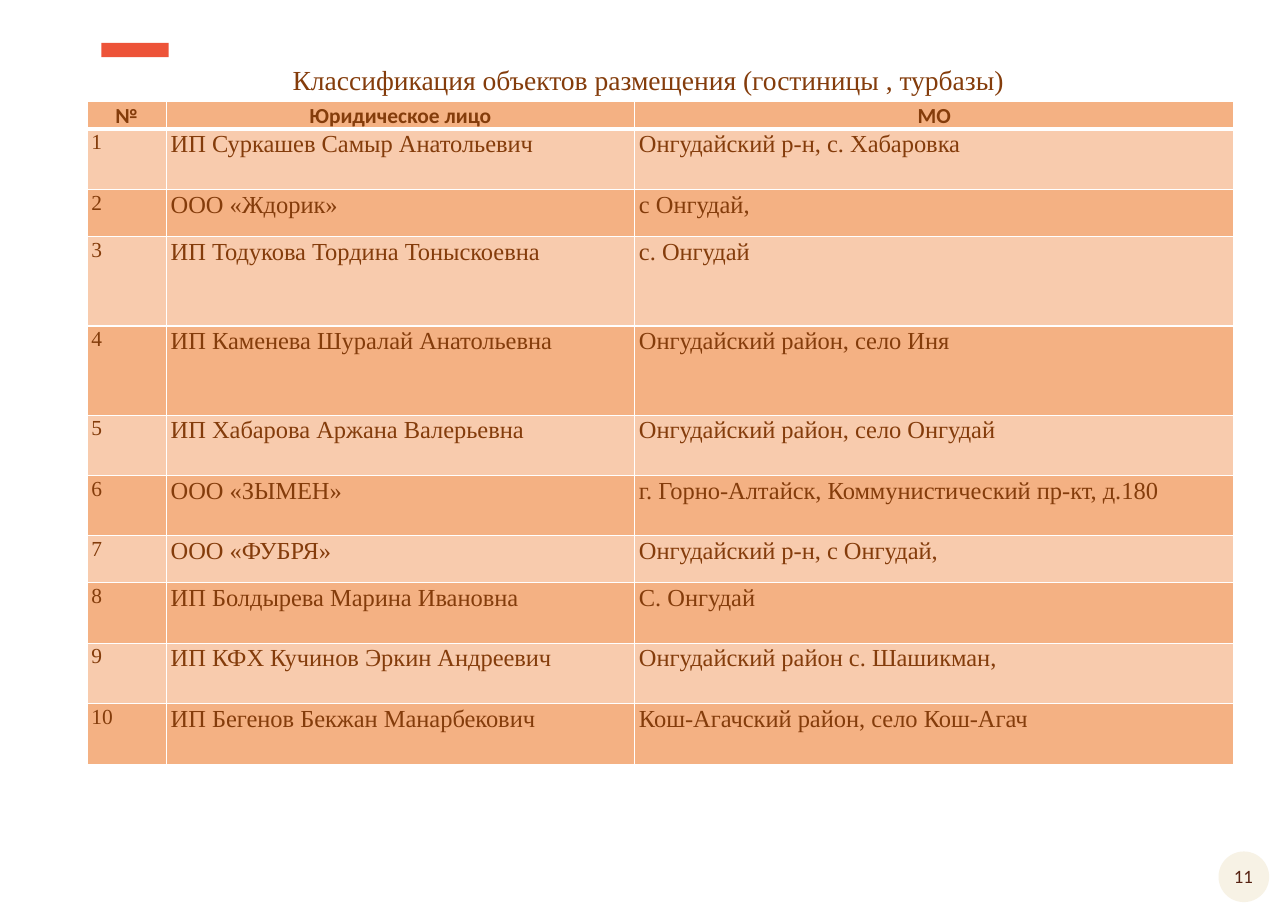
from lxml import etree
from pptx import Presentation
from pptx.dml.color import RGBColor
from pptx.enum.shapes import MSO_SHAPE
from pptx.enum.text import MSO_ANCHOR, PP_ALIGN
from pptx.oxml.ns import qn
from pptx.util import Inches, Pt

LEFT, CENTER = PP_ALIGN.LEFT, PP_ALIGN.CENTER
MIDDLE = MSO_ANCHOR.MIDDLE
OVAL, RECT = MSO_SHAPE.OVAL, MSO_SHAPE.RECTANGLE
SERIF, SANS = "Times New Roman", "Calibri"
BROWN, DARK, LIGHT, WHITE = "843C0B", "F4B183", "F8CBAD", "FFFFFF"


def rgb(color):
    return RGBColor.from_string(color)


def write(tf, text, size, font=SERIF, color=BROWN, bold=False, align=LEFT,
          line=1.0, after=0):
    p = tf.paragraphs[0]
    p.alignment, p.line_spacing, p.space_after = align, line, Pt(after)
    r = p.add_run()
    r.text = text
    r.font.size, r.font.name, r.font.bold = Pt(size), font, bold
    r.font.color.rgb = rgb(color)


prs = Presentation()
prs.slide_width, prs.slide_height = Inches(11.69), Inches(8.27)
s = prs.slides.add_slide(prs.slide_layouts[5])

# Accent bar and page-number badge
for kind, box, color in [(OVAL, (11.06, 7.73, 0.46, 0.46), "F7F2E5"),
                         (RECT, (0.92, 0.39, 0.61, 0.13), "ED5338")]:
    sp = s.shapes.add_shape(kind, *map(Inches, box))
    sp.shadow.inherit = False
    sp.fill.solid()
    sp.fill.fore_color.rgb = rgb(color)
    sp.line.fill.background()

page = s.shapes.add_textbox(Inches(11.03), Inches(7.8), Inches(0.51), Inches(0.31))
page.text_frame.word_wrap = True
write(page.text_frame, "11", 12.3, font=SANS, color="562212", align=CENTER)

# Title
title = s.shapes.title
title.left, title.top = Inches(1.53), Inches(0.52)
title.width, title.height = Inches(8.71), Inches(0.4)
title.text_frame.vertical_anchor = MIDDLE
write(title.text_frame, "Классификация объектов размещения (гостиницы , турбазы)",
      18, align=CENTER)

# Table content: legal entity, municipality, row height
header = ("№", "Юридическое лицо", "МО")
entries = [
    ("ИП Суркашев Самыр Анатольевич", "Онгудайский р-н, с. Хабаровка", 0.55),
    ("ООО «Ждорик»", "с Онгудай,", 0.43),
    ("ИП Тодукова Тордина Тоныскоевна", "с. Онгудай", 0.81),
    ("ИП Каменева Шуралай Анатольевна", "Онгудайский район, село Иня", 0.81),
    ("ИП Хабарова Аржана Валерьевна", "Онгудайский район, село Онгудай", 0.55),
    ("ООО «ЗЫМЕН»", "г. Горно-Алтайск, Коммунистический пр-кт, д.180", 0.54),
    ("ООО «ФУБРЯ»", "Онгудайский р-н, с Онгудай,", 0.43),
    ("ИП Болдырева Марина Ивановна", "С. Онгудай", 0.55),
    ("ИП КФХ Кучинов Эркин Андреевич", "Онгудайский район с. Шашикман,", 0.55),
    ("ИП Бегенов Бекжан Манарбекович", "Кош-Агачский район, село Кош-Агач", 0.55),
]
rows = [header] + [(str(n), name, place)
                   for n, (name, place, _) in enumerate(entries, 1)]
heights = [0.24] + [height for *_, height in entries]
widths = [0.72, 4.25, 5.44]

# Table
table = s.shapes.add_table(len(rows), len(widths), Inches(0.79), Inches(0.92),
                           Inches(sum(widths)), Inches(sum(heights))).table
for col, width in zip(table.columns, widths):
    col.width = Inches(width)
for row, height in zip(table.rows, heights):
    row.height = Inches(height)

for i, texts in enumerate(rows):
    for j, text in enumerate(texts):
        cell = table.cell(i, j)
        cell.margin_left = cell.margin_right = Inches(0.04)
        cell.margin_top = cell.margin_bottom = 0
        # White grid, thicker under the header
        for side in "LRTB":
            thick = (i, side) in ((0, "B"), (1, "T"))
            ln = etree.SubElement(cell._tc.get_or_add_tcPr(), qn(f"a:ln{side}"),
                                  w=str(Pt(3 if thick else 1)))
            fill = etree.SubElement(ln, qn("a:solidFill"))
            etree.SubElement(fill, qn("a:srgbClr"), val=WHITE)
        cell.fill.solid()
        cell.fill.fore_color.rgb = rgb(LIGHT if i % 2 else DARK)
        head = i == 0
        write(cell.text_frame, text, 14 if head or j == 0 else 16,
              font=SANS if head else SERIF, bold=head,
              align=CENTER if head else LEFT, line=1.07, after=8)

prs.save("out.pptx")
